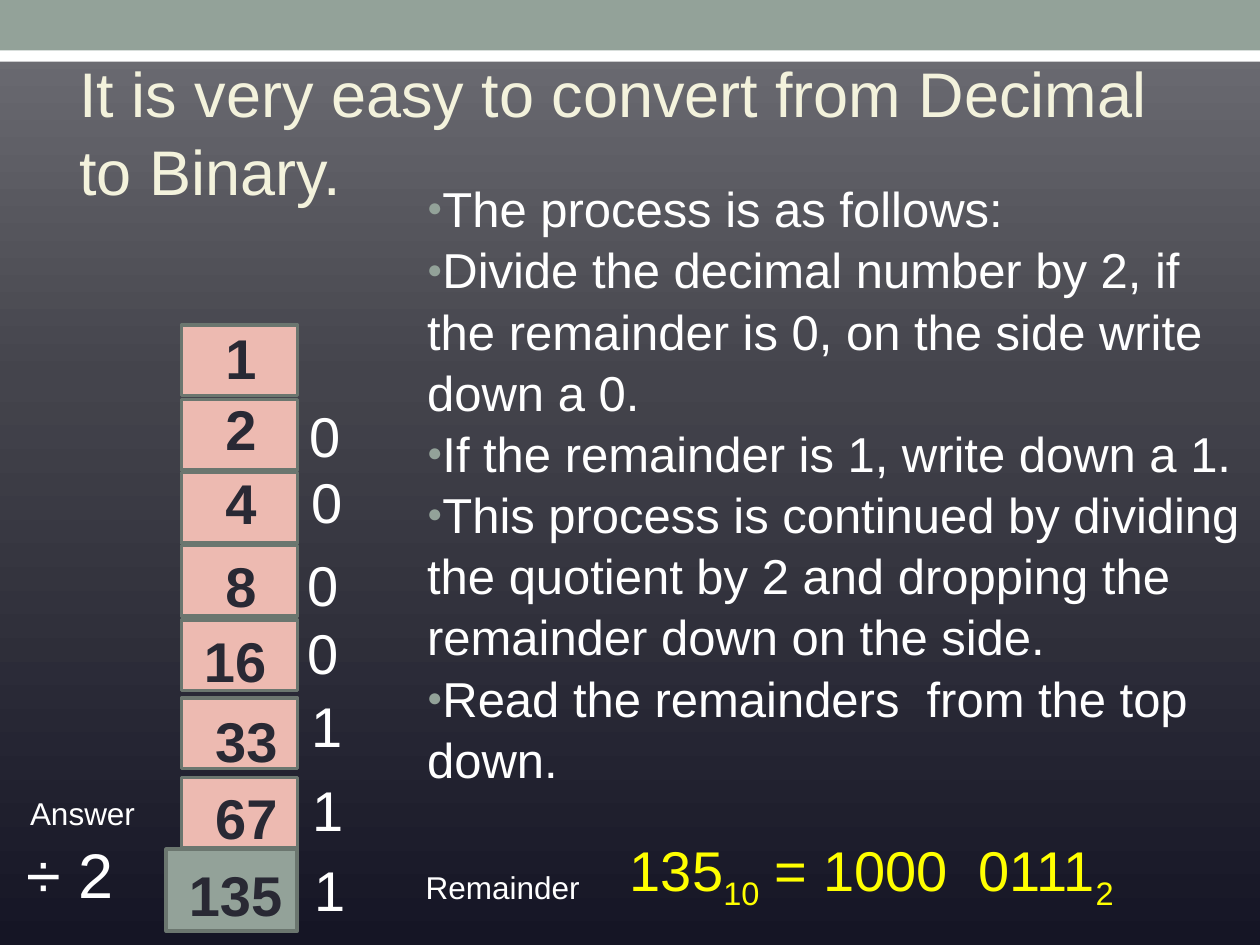
"""Build a slide on converting a decimal number to binary by repeated division."""
from copy import deepcopy

from lxml import etree
from pptx import Presentation
from pptx.dml.color import RGBColor
from pptx.enum.shapes import MSO_SHAPE
from pptx.enum.text import MSO_ANCHOR, MSO_AUTO_SIZE, PP_ALIGN
from pptx.oxml.ns import qn
from pptx.util import Inches, Pt

RECTANGLE = MSO_SHAPE.RECTANGLE
MIDDLE, TOP = MSO_ANCHOR.MIDDLE, MSO_ANCHOR.TOP
NO_AUTOFIT = MSO_AUTO_SIZE.NONE
LEFT, RIGHT = PP_ALIGN.LEFT, PP_ALIGN.RIGHT
FONT = "Arial"
COLORS = {
    "white": "FFFFFF", "sage": "93A299", "outline": "6B766F", "pink": "EDBAB1",
    "dark": "292934", "cream": "F3F2DC", "yellow": "FFFF00",
}
BACKDROP = [(0, "717177"), (0.4, "44444C"), (1, "151525")]


def add_box(left, top, width, height, fill, outlined=True):
    box = slide.shapes.add_shape(
        RECTANGLE, Inches(left), Inches(top), Inches(width), Inches(height))
    box.shadow.inherit = False
    box.fill.solid()
    box.fill.fore_color.rgb = RGBColor.from_string(COLORS[fill])
    if outlined:
        box.line.color.rgb = RGBColor.from_string(COLORS["outline"])
        box.line.width = Pt(2.08)
    else:
        box.line.fill.background()


def add_label(text, left, top, width, height, size, color="white", bold=False, align=LEFT):
    label = slide.shapes.add_textbox(
        Inches(left), Inches(top), Inches(width), Inches(height))
    label.text_frame.word_wrap = True
    paragraph = label.text_frame.paragraphs[0]
    paragraph.text = text
    paragraph.alignment = align
    paragraph.font.name = FONT
    paragraph.font.size = Pt(size)
    paragraph.font.bold = bold
    paragraph.font.color.rgb = RGBColor.from_string(COLORS[color])
    return paragraph


prs = Presentation()
prs.slide_width, prs.slide_height = Inches(10), Inches(7.5)
slide = prs.slides.add_slide(prs.slide_layouts[1])

backdrop = slide.background.fill
backdrop.gradient()
backdrop.gradient_angle = 270
stop_list = slide.element.xpath(".//p:bg//a:gsLst")[0]
stop_list.insert(1, deepcopy(stop_list[0]))
for stop, (position, color) in zip(backdrop.gradient_stops, BACKDROP):
    stop.position = position
    stop.color.rgb = RGBColor.from_string(color)

add_box(0, 0.24, 10, 0.25, "white", outlined=False)
add_box(0, 0, 10, 0.4, "sage", outlined=False)

title = slide.shapes.title
title.left, title.top, title.width, title.height = map(Inches, (0.53, 0.49, 9, 1.08))
title.text_frame.auto_size = NO_AUTOFIT
title.text_frame.vertical_anchor = MIDDLE
heading = title.text_frame.paragraphs[0]
heading.text = "It is very easy to convert from Decimal to Binary."
heading.alignment = LEFT
heading.line_spacing = 1.04
heading.font.name = FONT
heading.font.size = Pt(36)
heading.font.color.rgb = RGBColor.from_string(COLORS["cream"])

instructions = [
    "The process is as follows:",
    "Divide the decimal number by 2, if the remainder is 0, on the side write down a 0.",
    "If the remainder is 1, write down a 1.",
    "This process is continued by dividing the quotient by 2 and dropping the "
    "remainder down on the side.",
    "Read the remainders  from the top down.",
]
body = slide.placeholders[1]
body.left, body.top, body.width, body.height = map(Inches, (3.29, 1.35, 6.71, 5.33))
body.text_frame.auto_size = NO_AUTOFIT
body.text_frame.vertical_anchor = TOP
for index, instruction in enumerate(instructions):
    item = body.text_frame.add_paragraph() if index else body.text_frame.paragraphs[0]
    item.text = instruction
    item.level = min(index, 1)
    item.alignment = LEFT
    item.line_spacing = 1.04
    item.space_before = Pt(0)
    properties = item._p.get_or_add_pPr()
    properties.set("marL", "0")
    properties.set("indent", "0")
    bullet_color = etree.SubElement(properties, qn("a:buClr"))
    etree.SubElement(bullet_color, qn("a:srgbClr"), val=COLORS["sage"])
    etree.SubElement(properties, qn("a:buSzPct"), val="52000")
    etree.SubElement(properties, qn("a:buFont"), typeface=FONT)
    etree.SubElement(properties, qn("a:buChar"), char="●")
    item.font.name = FONT
    item.font.size = Pt(28)
    item.font.color.rgb = RGBColor.from_string(COLORS["white"])

for box_top in (2.58, 3.17, 3.75, 4.33, 4.92, 5.54, 6.17):
    add_box(1.44, box_top, 0.92, 0.56, "pink")
add_box(1.32, 6.74, 1.04, 0.65, "sage")

quotients = [
    ("1", 1.69, 2.52), ("2", 1.69, 3.08), ("4", 1.69, 3.67), ("8", 1.69, 4.33),
    ("16", 1.52, 4.92), ("33", 1.61, 5.56), ("67", 1.61, 6.17),
]
for quotient, left, top in quotients:
    add_label(quotient, left, top, 0.75, 0.64, 32, "dark", bold=True)
add_label("135", 1.4, 6.78, 1.12, 0.64, 32, "dark", bold=True)

remainders = [
    ("0", 2.36, 3.14), ("0", 2.37, 3.66), ("0", 2.34, 4.32), ("0", 2.34, 4.86),
    ("1", 2.37, 5.44), ("1", 2.38, 6.11), ("1", 2.4, 6.74),
]
for remainder, left, top in remainders:
    add_label(remainder, left, top, 0.92, 0.64, 32)

add_label("÷ 2", 0.11, 6.58, 1.42, 0.71, 36)
add_label("Answer", -0.46, 6.25, 1.63, 0.51, 18, align=RIGHT)
add_label("Remainder", 3.28, 6.84, 2.75, 0.51, 18)

result = add_label("135", 4.9, 6.58, 4.99, 0.64, 32, "yellow")
for part, is_base in (("10", True), (" = 1000  0111", False), ("2", True)):
    run = result.add_run()
    run.text = part
    if is_base:
        run.font._element.set("baseline", "-25000")

prs.save("out.pptx")
